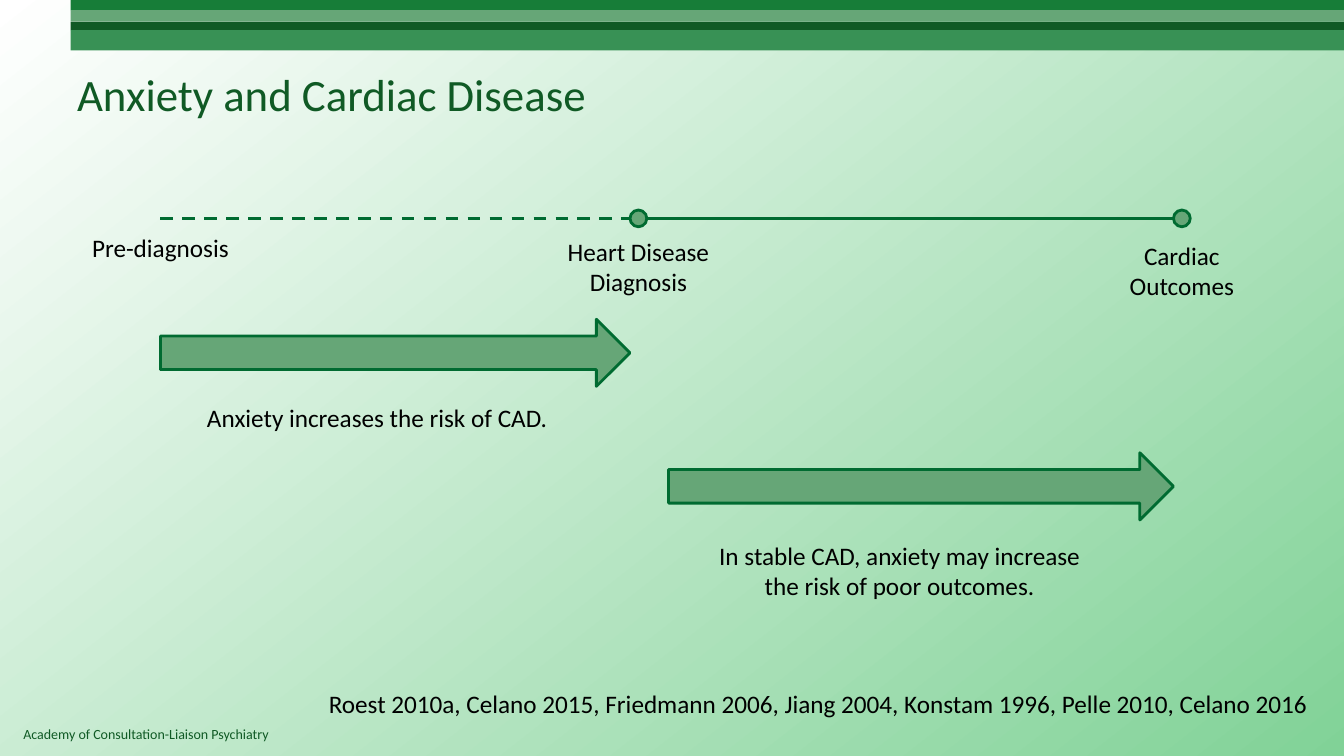
from dataclasses import dataclass
from itertools import pairwise

from lxml.etree import SubElement
from pptx import Presentation
from pptx.dml.color import RGBColor
from pptx.enum.dml import MSO_LINE
from pptx.enum.shapes import MSO_CONNECTOR, MSO_SHAPE
from pptx.enum.text import MSO_ANCHOR, PP_ALIGN
from pptx.oxml.ns import qn
from pptx.util import Inches, Pt


@dataclass(frozen=True)
class Theme:
    font: str = "Calibri"
    title_size: int = 32
    body_size: int = 18
    footer_size: int = 10
    text: str = "000000"
    dark: str = "105A25"
    fill: str = "66A677"
    line: str = "006B31"
    bands: tuple = ("177D38", "66A677", "105A25", "389155")
    background: tuple = ("FFFFFF", "81D297")
    outline_width: float = 2
    timeline_width: float = 2.25


class Board:
    COLUMNS, ROWS = 160, 90

    def __init__(self, prs, theme):
        self.theme = theme
        self.slide = prs.slides.add_slide(prs.slide_layouts[6])
        self.cell_w = prs.slide_width / self.COLUMNS
        self.cell_h = prs.slide_height / self.ROWS

    def x(self, columns):
        return round(columns * self.cell_w)

    def y(self, rows):
        return round(rows * self.cell_h)

    def box(self, col, row, cols, rows):
        return self.x(col), self.y(row), self.x(cols), self.y(rows)

    def background(self, angle):
        fill = self.slide.background.fill
        fill.gradient()
        fill.gradient_angle = 360 - angle
        for stop, color in zip(fill.gradient_stops, self.theme.background):
            stop.color.rgb = RGBColor.from_string(color)

    def shape(self, kind, col, row, cols, rows, fill=None, outlined=True):
        sp = self.slide.shapes.add_shape(kind, *self.box(col, row, cols, rows))
        sp.shadow.inherit = False
        sp.fill.solid()
        sp.fill.fore_color.rgb = RGBColor.from_string(fill or self.theme.fill)
        if outlined:
            sp.line.color.rgb = RGBColor.from_string(self.theme.line)
            sp.line.width = Pt(self.theme.outline_width)
        else:
            sp.line.fill.background()

    def segment(self, start, end, row, dash=None):
        line = self.slide.shapes.add_connector(
            MSO_CONNECTOR.STRAIGHT, self.x(start), self.y(row), self.x(end), self.y(row))
        line.line.color.rgb = RGBColor.from_string(self.theme.line)
        line.line.width = Pt(self.theme.timeline_width)
        line.line.dash_style = dash
        SubElement(line._element.spPr, qn("a:effectLst"))

    def text(self, words, col, row, cols, rows, size=None, color=None,
             align=PP_ALIGN.CENTER, anchor=MSO_ANCHOR.TOP):
        tf = self.slide.shapes.add_textbox(*self.box(col, row, cols, rows)).text_frame
        tf.word_wrap = True
        tf.vertical_anchor = anchor
        p = tf.paragraphs[0]
        p.alignment = align
        r = p.add_run()
        r.text = words
        r.font.name = self.theme.font
        r.font.size = Pt(size or self.theme.body_size)
        r.font.color.rgb = RGBColor.from_string(color or self.theme.text)


def main():
    prs = Presentation()
    prs.slide_width, prs.slide_height = Inches(13.33), Inches(7.5)
    theme = Theme()
    s = Board(prs, theme)
    s.background(52)

    band_left = 8.4
    band_edges = (0, 1.2, 2.6, 3.6, 6)
    for color, (top, bottom) in zip(theme.bands, pairwise(band_edges)):
        s.shape(MSO_SHAPE.RECTANGLE, band_left, top, s.COLUMNS - band_left,
                bottom - top, color, outlined=False)

    s.text("Academy of Consultation-Liaison Psychiatry", 1.6, 85.8, 111, 3.2,
           theme.footer_size, theme.dark, PP_ALIGN.LEFT)
    s.text("Anxiety and Cardiac Disease", 8, 3.6, 144, 15,
           theme.title_size, theme.dark, PP_ALIGN.LEFT, MSO_ANCHOR.MIDDLE)
    s.text("Roest 2010a, Celano 2015, Friedmann 2006, Jiang 2004, Konstam 1996, "
           "Pelle 2010, Celano 2016", 3.1, 81.4, 153.8, 4.8, align=PP_ALIGN.RIGHT)

    start, diagnosis, outcome = 19.1, 76, 140.7
    timeline_row, dot = 26, 2
    s.segment(diagnosis + dot / 2, outcome, timeline_row)
    s.segment(start, diagnosis, timeline_row, MSO_LINE.DASH)
    for center in (diagnosis, outcome):
        s.shape(MSO_SHAPE.FLOWCHART_CONNECTOR, center - dot / 2,
                timeline_row - dot / 2, dot, dot)

    for words, center, row, cols, rows in (
        ("Pre-diagnosis", start, 27.1, 29, 5),
        ("Heart Disease Diagnosis", diagnosis, 27.5, 29, 8.5),
        ("Cardiac Outcomes", outcome, 28, 15, 8.5),
        ("Anxiety increases the risk of CAD.", 44.9, 47.3, 45, 4.8),
        ("In stable CAD, anxiety may increase the risk of poor outcomes.",
         107.1, 63.7, 49, 8.5),
    ):
        s.text(words, center - cols / 2, row, cols, rows)

    for left, right, row in ((start, diagnosis - dot / 2, 38),
                             (79.6, outcome - dot / 2, 53.9)):
        s.shape(MSO_SHAPE.RIGHT_ARROW, left, row, right - left, 8)

    prs.save("out.pptx")


if __name__ == "__main__":
    main()
